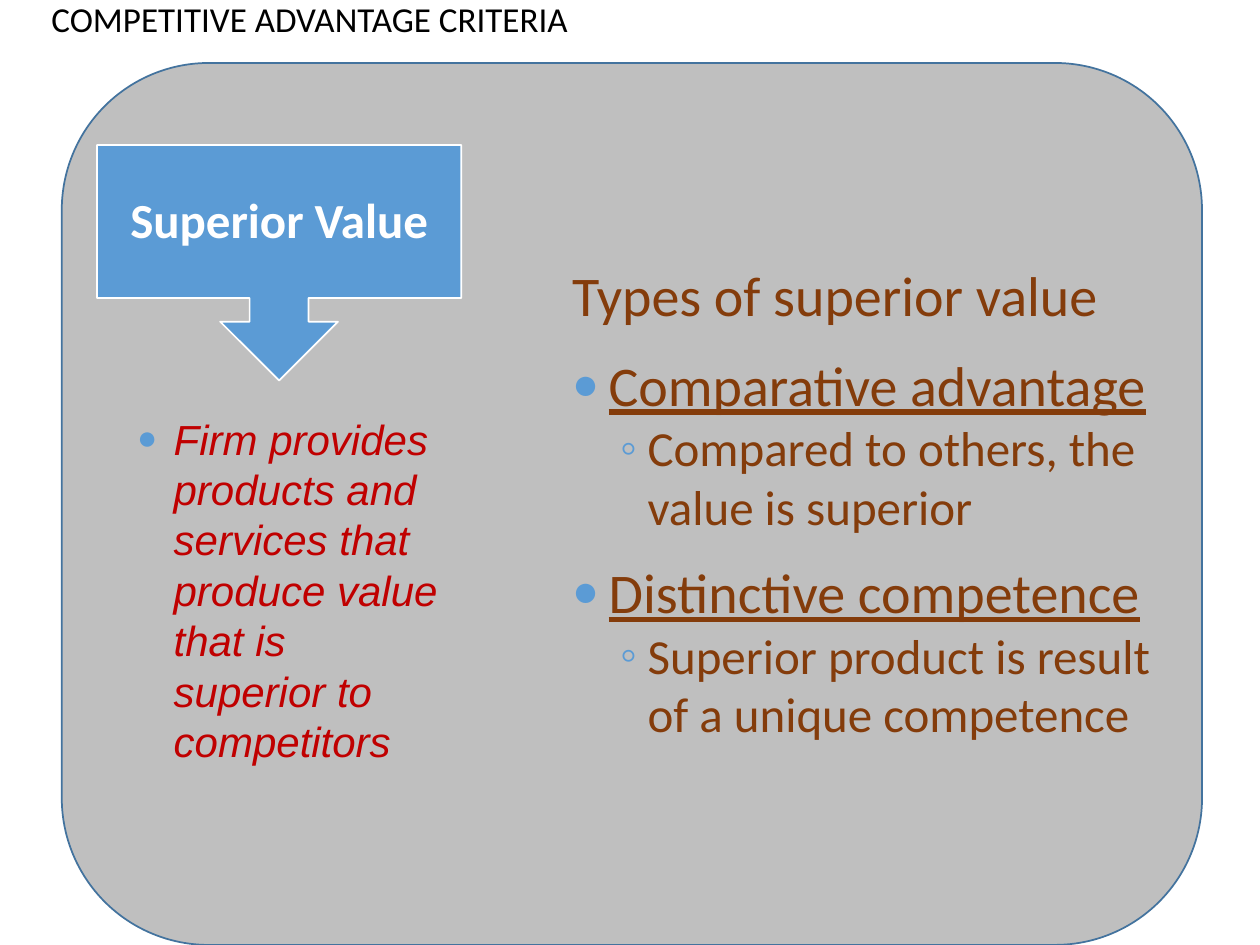
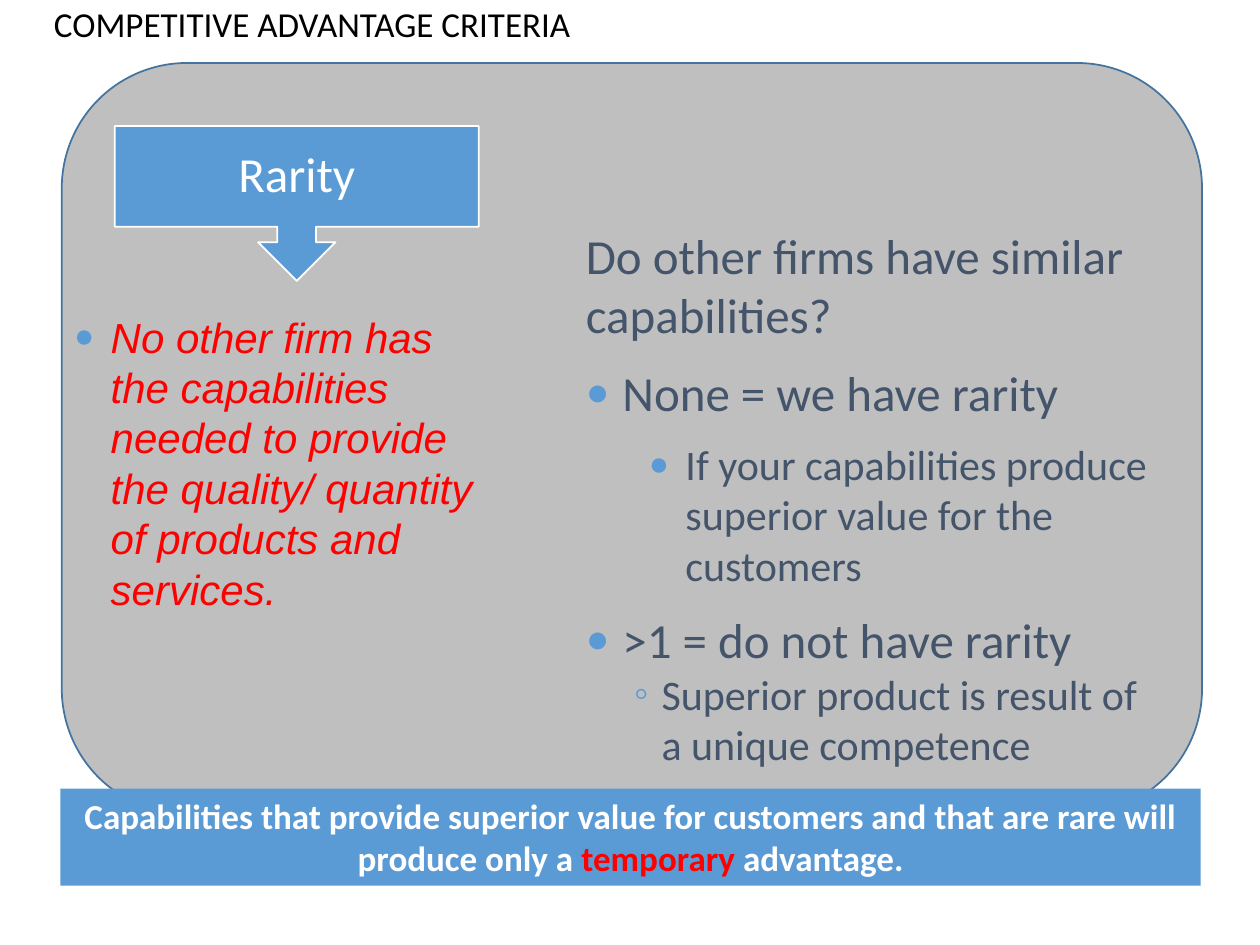
from lxml import etree
from pptx import Presentation
from pptx.dml.color import RGBColor
from pptx.enum import shapes, text
from pptx.oxml import ns
from pptx.util import Inches, Pt

# Shared colours
BLACK = RGBColor(0x00, 0x00, 0x00)
WHITE = RGBColor(0xFF, 0xFF, 0xFF)
GRAY = RGBColor(0xBF, 0xBF, 0xBF)
BLUE = RGBColor(0x5B, 0x9B, 0xD5)
PANEL_EDGE = RGBColor(0x43, 0x73, 0x9E)
BROWN = RGBColor(0x84, 0x3C, 0x0B)
SLATE = RGBColor(0x44, 0x54, 0x6A)
DARK_RED = RGBColor(0xC0, 0x00, 0x00)
RED = RGBColor(0xFF, 0x00, 0x00)

# Shared paragraph styles
SPACE_RATIO = 0.4
HEADING = dict(space_ratio=SPACE_RATIO)
HANGING = dict(HEADING, margin=0.29, hang=0.29)
POINT = dict(HANGING, bullet="●", bullet_size=80)
INNER_POINT = dict(POINT, margin=0.79, level=1)
DETAIL = dict(margin=0.6, hang=0.22, bullet="◦", level=1)
CENTERED = dict(align=text.PP_ALIGN.CENTER)


def add_bullet(para, char, size):
    """Put a blue bullet on a paragraph."""
    props = para._p.get_or_add_pPr()
    color = etree.SubElement(props, ns.qn("a:buClr"))
    etree.SubElement(color, ns.qn("a:srgbClr"), val=str(BLUE))
    etree.SubElement(props, ns.qn("a:buSzPct"), val=str(size * 1000))
    etree.SubElement(props, ns.qn("a:buFont"), typeface="Arial")
    etree.SubElement(props, ns.qn("a:buChar"), char=char)


def add_span(para, content, *, size, color, font="Calibri", bold=False,
             italic=False, underline=False):
    span = para.add_run()
    span.text = content
    span.font.name, span.font.size = font, Pt(size)
    span.font.bold, span.font.italic, span.font.underline = bold, italic, underline
    span.font.color.rgb = color


def write(para, content, *, margin=0, hang=0, bullet=None, bullet_size=100,
          level=0, space_ratio=0, align=None, spacing=None, first=True, **font):
    """Format a paragraph and add its text."""
    props = para._p.get_or_add_pPr()
    props.set("marL", str(Inches(margin)))
    props.set("indent", str(Inches(-hang)))
    para.level = level
    if bullet:
        add_bullet(para, bullet, bullet_size)
    if align is not None:
        para.alignment = align
    if spacing:
        para.line_spacing = spacing
    para.space_before = Pt(0 if first else space_ratio * font["size"])
    add_span(para, content, **font)


def set_frame(box, insets=(0.1, 0.05, 0.1, 0.05), anchor=text.MSO_ANCHOR.TOP):
    frame = box.text_frame
    frame.word_wrap = True
    frame.vertical_anchor = anchor
    (frame.margin_left, frame.margin_top,
     frame.margin_right, frame.margin_bottom) = map(Inches, insets)
    return frame


def add_text(page, place, paragraphs, **frame_format):
    """Add a text box; paragraphs are (text, format) pairs."""
    box = page.shapes.add_textbox(*map(Inches, place))
    frame = set_frame(box, **frame_format)
    for index, (content, style) in enumerate(paragraphs):
        para = frame.add_paragraph() if index else frame.paragraphs[0]
        write(para, content, first=index == 0, **style)


def add_block(page, kind, place, fill, line=None):
    block = page.shapes.add_shape(kind, *map(Inches, place))
    block.shadow.inherit = False
    block.fill.solid()
    block.fill.fore_color.rgb = fill
    if line is None:
        block.line.fill.background()
    else:
        block.line.color.rgb = line
        block.line.width = Pt(1)
    return block


def add_base(deck, panel_height, title_left, title_height):
    """Start a slide with the rounded panel and the title."""
    page = deck.slides.add_slide(deck.slide_layouts[6])
    add_block(page, shapes.MSO_SHAPE.ROUNDED_RECTANGLE,
              (0.49, 0.5, 9.05, panel_height), GRAY, PANEL_EDGE)
    title = dict(size=20, color=BLACK, spacing=0.9)
    add_text(page, (title_left, 0, 9.42, title_height),
             [("COMPETITIVE ADVANTAGE CRITERIA", title)],
             anchor=text.MSO_ANCHOR.MIDDLE)
    return page


def add_callout(page, label, left, top, height, label_top, label_height, bold=False):
    """Add a box with an arrow pointing down, and its label."""
    width = 2.89
    callout = add_block(page, shapes.MSO_SHAPE.UP_ARROW_CALLOUT,
                        (left, top, width, height), BLUE, WHITE)
    callout.rotation = 180
    style = dict(CENTERED, size=28, color=WHITE, bold=bold, spacing=0.9)
    add_text(page, (left, label_top, width, label_height), [(label, style)],
             insets=(0.16,) * 4, anchor=text.MSO_ANCHOR.MIDDLE)


def add_definition(page, place, content, color):
    style = dict(POINT, size=24, color=color, font="Arial", italic=True)
    add_text(page, place, [(content, style)])


def add_outline(page, place, color, entries):
    """Add the right-hand outline; entries are (text, style, size, extras)."""
    add_text(page, place,
             [(content, dict(style, size=size, color=color, **extras))
              for content, style, size, extras in entries],
             insets=(0.2, 0.1, 0.1, 0.05))


def add_conclusion(page, place, spans):
    band = add_block(page, shapes.MSO_SHAPE.RECTANGLE, place, BLUE)
    para = set_frame(band).paragraphs[0]
    para.alignment = text.PP_ALIGN.CENTER
    for content, color in spans:
        add_span(para, content, size=20, color=color, bold=True)


def build_superior_value(deck):
    page = add_base(deck, panel_height=7, title_left=0.31, title_height=0.33)
    underlined = dict(underline=True)
    add_outline(page, (4.34, 1.97, 4.96, 4.75), BROWN, [
        ("Types of superior value", HANGING, 32, {}),
        ("Comparative advantage", POINT, 32, underlined),
        ("Compared to others, the value is superior", DETAIL, 28, {}),
        ("Distinctive competence", POINT, 32, underlined),
        ("Superior product is result of a unique competence", DETAIL, 28, {}),
    ])
    add_callout(page, "Superior Value", left=0.77, top=1.15, height=1.87,
                label_top=0.92, label_height=1.7, bold=True)
    add_definition(page, (0.99, 3.23, 2.6, 2.93),
                   "Firm provides products and services that produce value "
                   "that is superior to competitors", DARK_RED)


def build_rarity(deck):
    page = add_base(deck, panel_height=5.96, title_left=0.33, title_height=0.42)
    add_outline(page, (4.45, 1.69, 4.89, 3.99), SLATE, [
        ("Do other firms have similar capabilities?", HEADING, 28, {}),
        ("None = we have rarity", POINT, 28, {}),
        ("If your capabilities produce superior value for the customers",
         INNER_POINT, 24, {}),
        (">1 = do not have rarity", POINT, 28, {}),
        ("Superior product is result of a unique competence", DETAIL, 24, {}),
    ])
    add_definition(page, (0.49, 2.42, 3.59, 2.52),
                   "No other firm has the capabilities needed to provide "
                   "the quality/ quantity of products and services.", RED)
    add_callout(page, "Rarity", left=0.91, top=1, height=1.23,
                label_top=1, label_height=0.8)
    add_conclusion(page, (0.48, 6.26, 9.05, 0.77), [
        ("Capabilities that provide superior value for customers and that are "
         "rare will produce only a ", WHITE),
        ("temporary", RED),
        (" advantage.", WHITE),
    ])


def main():
    deck = Presentation()
    deck.slide_width, deck.slide_height = Inches(10), Inches(7.5)
    build_superior_value(deck)
    build_rarity(deck)
    deck.save("out.pptx")


if __name__ == "__main__":
    main()
